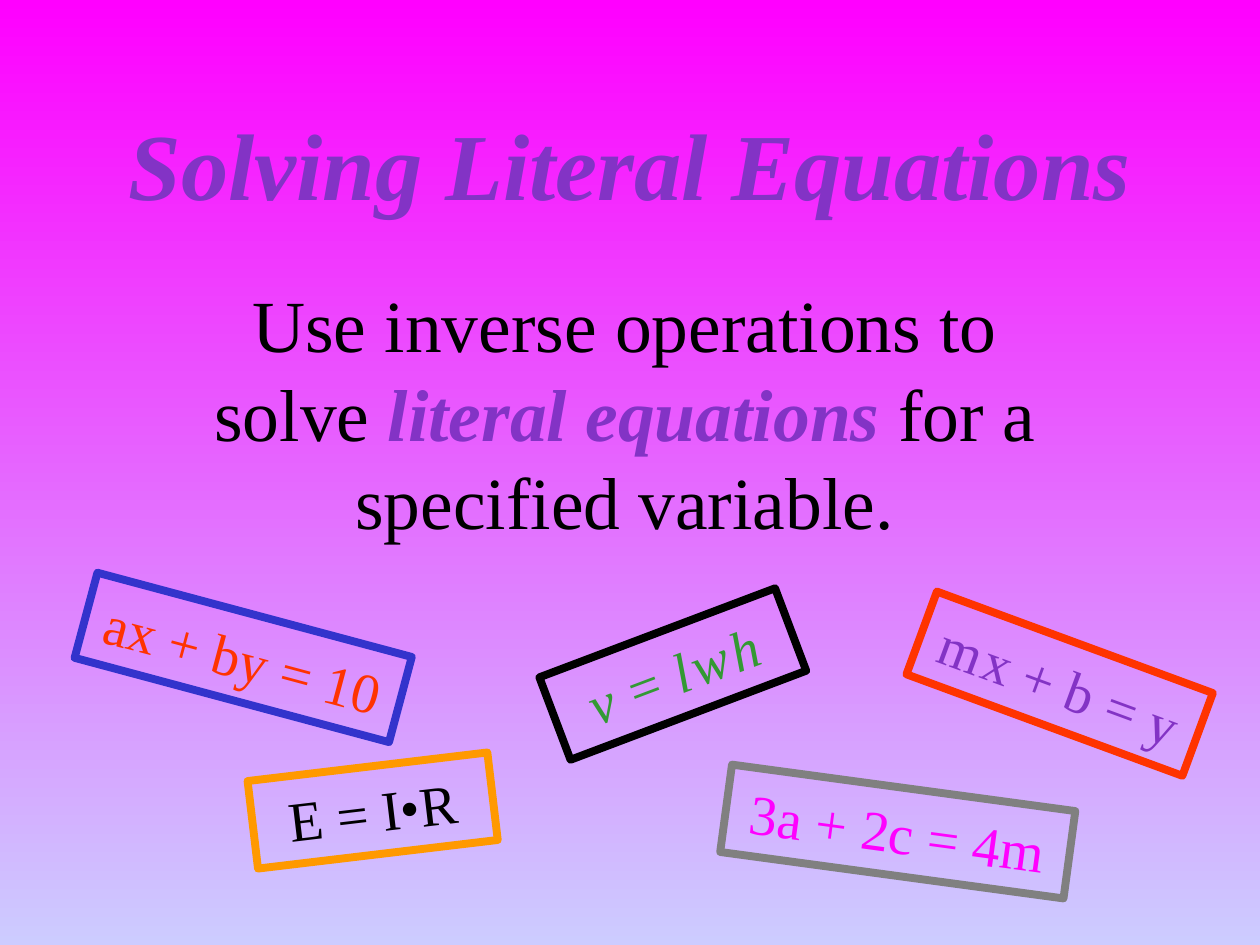
from dataclasses import dataclass

from pptx import Presentation
from pptx.dml.color import RGBColor
from pptx.enum.shapes import MSO_SHAPE
from pptx.enum.text import MSO_ANCHOR, PP_ALIGN
from pptx.slide import Slide
from pptx.util import Pt

COLORS = {
    "magenta": "FF00FF",
    "lavender": "CCCCFF",
    "purple": "8333C5",
    "black": "000000",
    "blue": "3333CC",
    "red": "FF3300",
    "green": "339933",
    "orange": "FF9900",
    "gray": "808080",
}


def rgb(name):
    return RGBColor.from_string(COLORS[name])


@dataclass
class SlideBuilder:
    slide: Slide
    font: str = "Times New Roman"
    equation_size: float = 32
    gap_size: float = 8
    border: float = 4.5
    equation_height: float = 50.4

    def background(self, top, bottom):
        fill = self.slide.background.fill
        fill.gradient()
        fill.gradient_angle = 270
        for stop, color, position in zip(fill.gradient_stops, (top, bottom), (0, 1)):
            stop.color.rgb = rgb(color)
            stop.position = position

    def add_runs(self, shape, runs, anchor, line_spacing=None):
        frame = shape.text_frame
        frame.word_wrap = True
        frame.vertical_anchor = anchor
        paragraph = frame.paragraphs[0]
        paragraph.alignment = PP_ALIGN.CENTER
        if line_spacing:
            paragraph.line_spacing = Pt(line_spacing)
        for text, size, color, bold, italic in runs:
            run = paragraph.add_run()
            run.text = text
            run.font.name = self.font
            run.font.size = Pt(size)
            run.font.bold = bold
            run.font.italic = italic
            run.font.color.rgb = rgb(color)

    def text(self, left, top, width, height, runs, anchor, line_spacing=None):
        box = self.slide.shapes.add_textbox(Pt(left), Pt(top), Pt(width), Pt(height))
        self.add_runs(box, runs, anchor, line_spacing)

    def equation(self, left, top, width, rotation, border, color, parts, italic=False):
        shape = self.slide.shapes.add_shape(
            MSO_SHAPE.RECTANGLE, Pt(left), Pt(top), Pt(width), Pt(self.equation_height)
        )
        shape.rotation = rotation
        shape.shadow.inherit = False
        shape.fill.background()
        shape.line.color.rgb = rgb(border)
        shape.line.width = Pt(self.border)
        runs = [
            (part, self.gap_size if part == " " else self.equation_size, color, False, italic)
            for part in parts
        ]
        self.add_runs(shape, runs, MSO_ANCHOR.MIDDLE)


def main():
    presentation = Presentation()
    presentation.slide_width = Pt(720)
    presentation.slide_height = Pt(540)
    builder = SlideBuilder(presentation.slides.add_slide(presentation.slide_layouts[6]))

    builder.background("magenta", "lavender")
    builder.text(
        54, 48, 612, 90,
        [("Solving Literal Equations", 54, "purple", True, True)],
        MSO_ANCHOR.MIDDLE,
    )
    builder.text(
        90, 156, 534, 158.4,
        [
            ("Use inverse operations to solve ", 42, "black", False, False),
            ("literal equations", 42, "purple", True, True),
            (" for a specified variable.", 42, "black", False, False),
        ],
        MSO_ANCHOR.TOP,
        line_spacing=50.5,
    )

    builder.equation(46, 350.5, 186, 15, "blue", "red", ["ax + by = 10"])
    builder.equation(
        312.5, 360, 144, 339.3, "black", "green", ["v = l", " ", "w", " ", "h"], italic=True
    )
    builder.equation(144, 438, 138, 353.2, "orange", "black", ["E = I•R"])
    builder.equation(521.5, 365.5, 168, 20.2, "red", "purple", ["m", " ", "x + b = y"])
    builder.equation(414, 450, 198, 7.7, "gray", "magenta", ["3a + 2c = 4m"])

    presentation.save("out.pptx")


if __name__ == "__main__":
    main()
